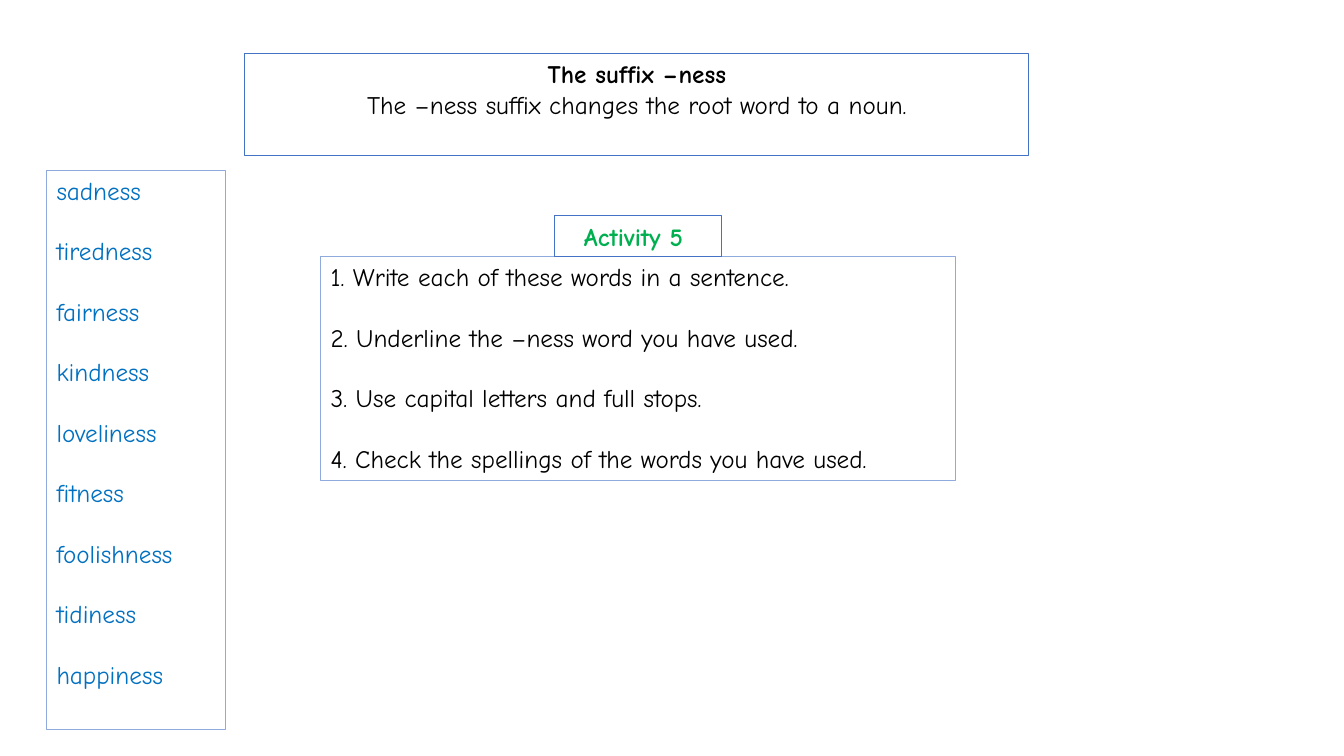
from lxml import etree
from pptx import Presentation
from pptx.dml.color import RGBColor
from pptx.enum.shapes import MSO_SHAPE
from pptx.enum.text import MSO_ANCHOR, MSO_AUTO_SIZE, PP_ALIGN
from pptx.oxml.ns import qn
from pptx.util import Cm, Pt

RECTANGLE = MSO_SHAPE.RECTANGLE
TOP = MSO_ANCHOR.TOP
FIXED = MSO_AUTO_SIZE.NONE
LEFT, CENTER = PP_ALIGN.LEFT, PP_ALIGN.CENTER

FONT = "Comic Neue"
TEXT_SIZE = Pt(18)
LIST_GAP = Pt(21.6)
TWO_CONTENT = 3

COLOURS = {
    "frame": "4472C4",
    "list_frame": "8FAADC",
    "text": "000000",
    "word": "0070C0",
    "activity": "00B050",
}

WORDS = [
    "sadness", "tiredness", "fairness", "kindness", "loveliness",
    "fitness", "foolishness", "tidiness", "happiness",
]
INSTRUCTIONS = [
    "1. Write each of these words in a sentence.",
    "2. Underline the –ness word you have used.",
    "3. Use capital letters and full stops.",
    "4. Check the spellings of the words you have used.",
]


def colour(name):
    return RGBColor.from_string(COLOURS[name])


def frame_box(box, left, top, width, height, line_colour):
    box.left, box.top = Cm(left), Cm(top)
    box.width, box.height = Cm(width), Cm(height)
    box.fill.background()
    box.line.color.rgb = colour(line_colour)
    box.line.width = Pt(0.75)
    box.text_frame.word_wrap = True
    box.text_frame.auto_size = FIXED
    box.text_frame.vertical_anchor = TOP


def write_lines(box, lines, text_colour, align=LEFT, gap=0):
    frame = box.text_frame
    for index, (text, bold) in enumerate(lines):
        paragraph = frame.paragraphs[0] if index == 0 else frame.add_paragraph()
        paragraph.alignment = align
        paragraph.space_before = Pt(0)
        paragraph.space_after = gap
        run = paragraph.add_run()
        run.text = text
        run.font.name = FONT
        run.font.size = TEXT_SIZE
        run.font.bold = bold
        run.font.color.rgb = colour(text_colour)


def remove_bullets(box):
    for paragraph in box.text_frame.paragraphs:
        properties = paragraph._p.get_or_add_pPr()
        properties.set("marL", "0")
        properties.set("indent", "0")
        etree.SubElement(properties, qn("a:buNone"))


def fill_list(body, items, text_colour, *place):
    frame_box(body, *place, "list_frame")
    write_lines(body, [(item, False) for item in items], text_colour, gap=LIST_GAP)
    remove_bullets(body)


def fill_heading(title):
    frame_box(title, 6.17, 1.35, 19.76, 2.57, "frame")
    lines = [
        ("The suffix –ness", True),
        ("The –ness suffix changes the root word to a noun.", False),
    ]
    write_lines(title, lines, "text", CENTER, Pt(0))


def add_activity_label(slide):
    label = slide.shapes.add_shape(RECTANGLE, 0, 0, 0, 0)
    label.shadow.inherit = False
    frame_box(label, 13.97, 5.44, 4.22, 1.02, "frame")
    write_lines(label, [("Activity 5 ", True)], "activity", CENTER, Pt(0))


def main():
    presentation = Presentation()
    presentation.slide_width = Cm(33.87)
    presentation.slide_height = Cm(19.05)
    slide = presentation.slides.add_slide(presentation.slide_layouts[TWO_CONTENT])
    heading, word_list, instruction_list = slide.placeholders
    fill_heading(heading)
    fill_list(word_list, WORDS, "word", 1.17, 4.29, 4.52, 14.1)
    fill_list(instruction_list, INSTRUCTIONS, "text", 8.08, 6.46, 16, 5.64)
    add_activity_label(slide)
    presentation.save("out.pptx")


if __name__ == "__main__":
    main()
